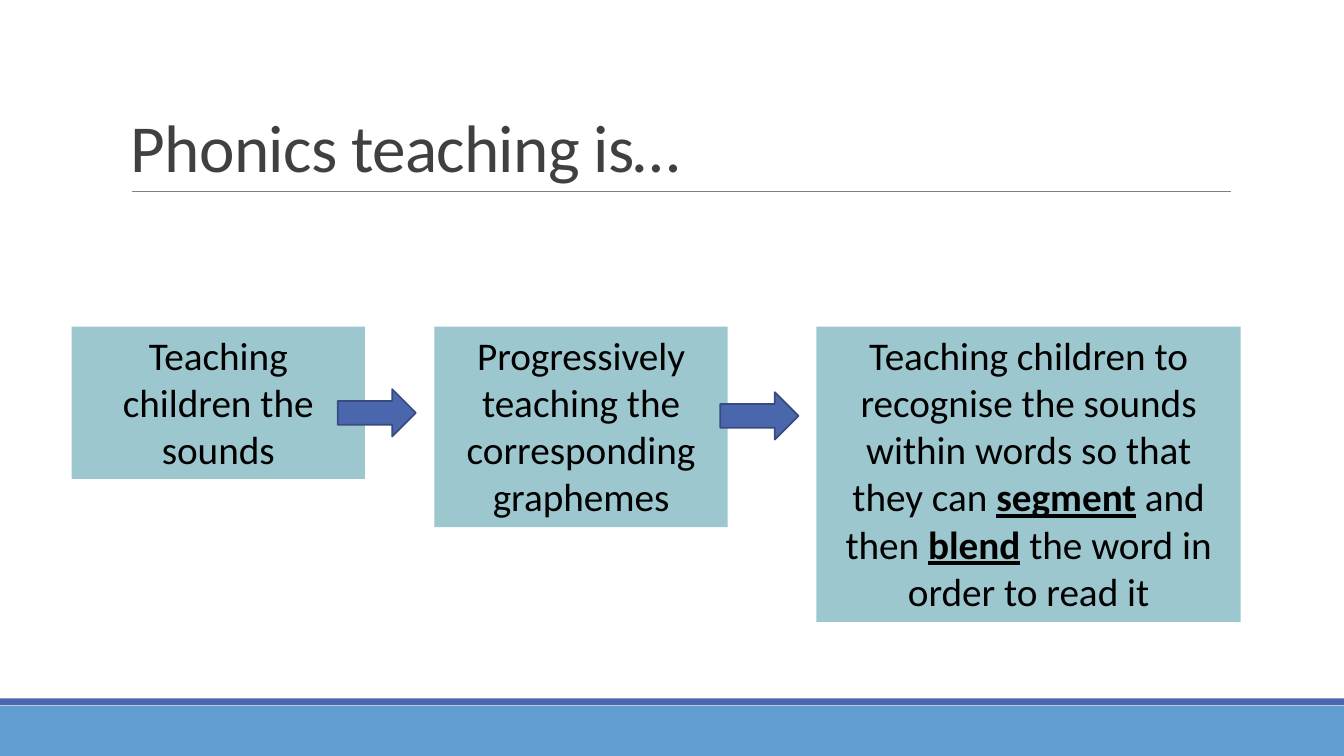
from lxml.etree import SubElement
from pptx import Presentation
from pptx.dml.color import RGBColor
from pptx.enum.shapes import MSO_CONNECTOR, MSO_SHAPE
from pptx.enum.text import MSO_ANCHOR, MSO_AUTO_SIZE, PP_ALIGN
from pptx.oxml.ns import qn
from pptx.util import Pt

SLIDE_WIDTH, SLIDE_HEIGHT = 960, 540
FOOTER_BLUE = RGBColor(0x62, 0x9D, 0xD1)
DEEP_BLUE = RGBColor(0x4A, 0x66, 0xAC)
ARROW_OUTLINE = RGBColor(0x37, 0x4B, 0x7F)
BOX_TEAL = RGBColor(0x9C, 0xC7, 0xCE)
RULE_GREY = RGBColor(0x80, 0x80, 0x80)
TITLE_GREY = RGBColor(0x40, 0x40, 0x40)
BLACK = RGBColor(0, 0, 0)

BOX_TOP = 233.3
# left, width, height, text pieces; every second piece is emphasised
STEPS = [
    (51.1, 209.5, 108.9, ["Teaching children the sounds"]),
    (310.3, 209.5, 143.2, ["Progressively teaching the corresponding graphemes"]),
    (583.2, 303, 211, [
        "Teaching children to recognise the sounds within words so that they can ",
        "segment", " and then ", "blend", " the word in order to read it"]),
]
ARROW_CORNERS = [(241.2, 278), (514.5, 280.2)]


class SlideBuilder:
    font_name = "Calibri"
    title_size = 48
    body_size = 28

    def __init__(self, slide):
        self.slide = slide

    def style_run(self, run, size, color):
        run.font.name = self.font_name
        run.font.size = Pt(size)
        run.font.color.rgb = color

    def block(self, left, top, width, height, fill,
              preset=MSO_SHAPE.RECTANGLE, outline=None):
        """Add a filled preset shape, without an outline unless one is given."""
        shape = self.slide.shapes.add_shape(
            preset, Pt(left), Pt(top), Pt(width), Pt(height))
        shape.shadow.inherit = False
        shape.fill.solid()
        shape.fill.fore_color.rgb = fill
        if outline is None:
            shape.line.fill.background()
        else:
            shape.line.color.rgb = outline
            shape.line.width = Pt(1.25)
        return shape

    def rule(self, left, right, y):
        line = self.slide.shapes.add_connector(
            MSO_CONNECTOR.STRAIGHT, Pt(left), Pt(y), Pt(right), Pt(y))
        line.line.color.rgb = RULE_GREY
        line.line.width = Pt(0.5)
        SubElement(line._element.spPr, qn("a:effectLst"))

    def title(self, text, left, top, width, height):
        box = self.slide.shapes.add_textbox(Pt(left), Pt(top), Pt(width), Pt(height))
        text_frame = box.text_frame
        text_frame.text = text
        text_frame.word_wrap = True
        text_frame.vertical_anchor = MSO_ANCHOR.BOTTOM
        paragraph = text_frame.paragraphs[0]
        paragraph.line_spacing = 0.85
        run = paragraph.runs[0]
        self.style_run(run, self.title_size, TITLE_GREY)
        run._r.get_or_add_rPr().set("spc", "-50")

    def step(self, left, width, height, pieces):
        text_frame = self.block(left, BOX_TOP, width, height, BOX_TEAL).text_frame
        text_frame.word_wrap = True
        text_frame.auto_size = MSO_AUTO_SIZE.SHAPE_TO_FIT_TEXT
        text_frame.vertical_anchor = MSO_ANCHOR.TOP
        paragraph = text_frame.paragraphs[0]
        paragraph.alignment = PP_ALIGN.CENTER
        for index, piece in enumerate(pieces):
            run = paragraph.add_run()
            run.text = piece
            self.style_run(run, self.body_size, BLACK)
            run.font.bold = run.font.underline = index % 2 == 1

    def arrow(self, left, top):
        self.block(left, top, 55.8, 33.8, DEEP_BLUE,
                   MSO_SHAPE.RIGHT_ARROW, ARROW_OUTLINE)


def main():
    presentation = Presentation()
    presentation.slide_width = Pt(SLIDE_WIDTH)
    presentation.slide_height = Pt(SLIDE_HEIGHT)
    builder = SlideBuilder(presentation.slides.add_slide(presentation.slide_layouts[6]))

    builder.block(0, 504, SLIDE_WIDTH, 36, FOOTER_BLUE)
    builder.block(0, 498.8, SLIDE_WIDTH, 5, DEEP_BLUE)
    builder.rule(94, 879, 136.8)
    for step in STEPS:
        builder.step(*step)
    builder.title("Phonics teaching is…", 86.4, 22.5, 792, 114.3)
    for corner in ARROW_CORNERS:
        builder.arrow(*corner)

    presentation.save("out.pptx")


if __name__ == "__main__":
    main()
